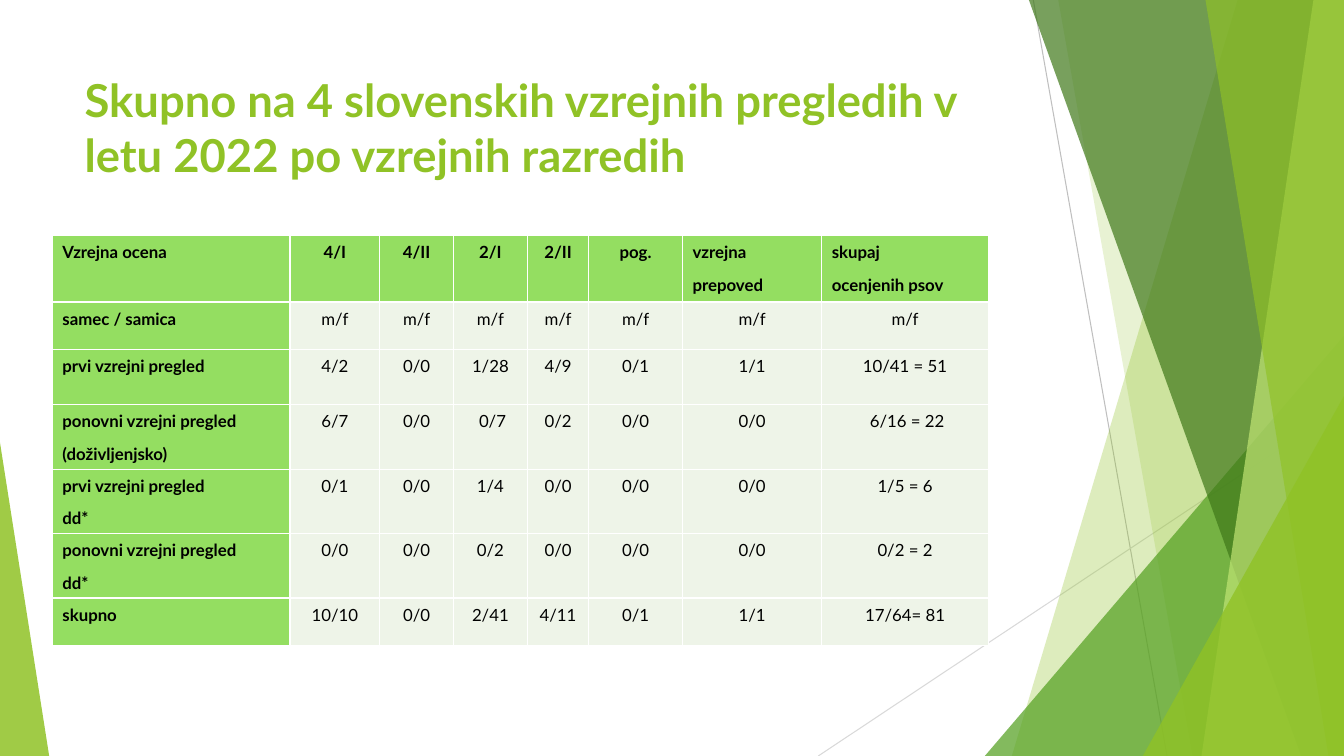
from dataclasses import dataclass

from lxml.etree import SubElement
from pptx import Presentation
from pptx.dml.color import RGBColor
from pptx.enum.shapes import MSO_CONNECTOR, MSO_SHAPE
from pptx.enum.text import MSO_ANCHOR, MSO_AUTO_SIZE, PP_ALIGN
from pptx.oxml.ns import qn
from pptx.util import Cm, Pt


@dataclass(frozen=True)
class Theme:
    """Colours, font and type sizes of the slide."""
    font: str = "Lato"
    title: float = 32.4
    body: float = 12
    ink: str = "000000"
    white: str = "FFFFFF"
    lime: str = "90C226"
    pale: str = "C0E474"
    green: str = "54A021"
    dark: str = "3F7819"
    head: str = "94DE61"
    cell: str = "EEF4E8"
    steep: str = "BFBFBF"
    flat: str = "D9D9D9"


THEME = Theme()
WIDE, HIGH = 33.87, 19.05
COLS = [5.99, 2.26, 1.86, 1.86, 1.55, 2.36, 3.51, 4.2]
ROWS = [1.68, 1.19, 1.4, 1.4, 1.4, 1.4, 1.19]
GRID = [
    ["Vzrejna ocena", "4/I", "4/II", "2/I", "2/II", "pog.",
     "vzrejna\nprepoved", "skupaj\nocenjenih psov"],
    ["samec / samica"] + ["m/f"] * 7,
    ["prvi vzrejni pregled", "4/2", "0/0", "1/28", "4/9", "0/1", "1/1", "10/41 = 51"],
    ["ponovni vzrejni pregled\n(doživljenjsko)",
     "6/7", "0/0", " 0/7", "0/2", "0/0", "0/0", " 6/16 = 22"],
    ["prvi vzrejni pregled\ndd*", "0/1", "0/0", "1/4", "0/0", "0/0", "0/0", "1/5 = 6"],
    ["ponovni vzrejni pregled\ndd*",
     "0/0", "0/0", "0/2", "0/0", "0/0", "0/0", "0/2 = 2"],
    ["skupno", "10/10", "0/0", "2/41", "4/11", "0/1", "1/1", "17/64= 81"],
]


def tint(shape, color, alpha):
    """Fill a shape with a see-through colour and no outline."""
    shape.shadow.inherit = False
    shape.line.fill.background()
    shape.fill.solid()
    shape.fill.fore_color.rgb = RGBColor.from_string(color)
    tone = shape.element.spPr.find(qn("a:solidFill"))[0]
    SubElement(tone, qn("a:alpha"), val=str(alpha * 1000))


def add_band(slide, top, foot, color, alpha):
    """Draw a slanted band that runs to the right edge."""
    pen = slide.shapes.build_freeform(Cm(top), 0)
    pen.add_line_segments(
        [(Cm(WIDE), 0), (Cm(WIDE), Cm(HIGH)), (Cm(foot), Cm(HIGH))], close=True)
    tint(pen.convert_to_shape(), color, alpha)


def add_wedge(slide, left, top, right, peak, color, alpha):
    """Draw a triangle that stands on the bottom edge."""
    wedge = slide.shapes.add_shape(
        MSO_SHAPE.ISOSCELES_TRIANGLE, Cm(left), Cm(top), Cm(right - left), Cm(HIGH - top))
    wedge.adjustments[0] = peak
    tint(wedge, color, alpha)


def add_line(slide, start, end, color):
    """Draw a thin straight line."""
    line = slide.shapes.add_connector(
        MSO_CONNECTOR.STRAIGHT, *map(Cm, start), *map(Cm, end))
    line.line.width = Pt(0.75)
    line.line.color.rgb = RGBColor.from_string(color)
    SubElement(line.element.spPr, qn("a:effectLst"))


def add_run(para, text, size, color, bold):
    """Add one formatted run to a paragraph."""
    run = para.add_run()
    run.text = text
    run.font.name = THEME.font
    run.font.size = Pt(size)
    run.font.bold = bold
    run.font.color.rgb = RGBColor.from_string(color)


def set_title(slide, text):
    """Place the title in front of the art and fill it."""
    title = slide.shapes.title
    slide.shapes.element.append(title.element)
    title.left, title.top = Cm(1.88), Cm(1.7)
    title.width, title.height = Cm(23.88), Cm(3.66)
    frame = title.text_frame
    frame.word_wrap = True
    frame.auto_size = MSO_AUTO_SIZE.NONE
    frame.vertical_anchor = MSO_ANCHOR.TOP
    para = frame.paragraphs[0]
    para.alignment = PP_ALIGN.LEFT
    add_run(para, text, THEME.title, THEME.lime, True)


def add_edge(cell):
    """Give a cell white borders on all sides."""
    props = cell._tc.get_or_add_tcPr()
    for side in ("lnL", "lnR", "lnT", "lnB"):
        edge = SubElement(props, qn(f"a:{side}"), w=str(Pt(1)))
        fill = SubElement(edge, qn("a:solidFill"))
        SubElement(fill, qn("a:srgbClr"), val=THEME.white)


def fill_cell(cell, text, head, align):
    """Write and format one table cell."""
    add_edge(cell)
    cell.fill.solid()
    cell.fill.fore_color.rgb = RGBColor.from_string(THEME.head if head else THEME.cell)
    frame = cell.text_frame
    for i, part in enumerate(text.split("\n")):
        para = frame.add_paragraph() if i else frame.paragraphs[0]
        para.alignment = align
        para.line_spacing = 1.07
        para.space_after = Pt(8)
        props = para._p.get_or_add_pPr()
        props.set("marL", str(Cm(0.97)))
        props.set("indent", str(Cm(-0.97)))
        add_run(para, part, THEME.body, THEME.ink, head)


def add_grid(slide):
    """Build the table of breeding grades."""
    table = slide.shapes.add_table(
        len(ROWS), len(COLS), Cm(1.32), Cm(5.93), Cm(sum(COLS)), Cm(sum(ROWS))).table
    for col, width in zip(table.columns, COLS):
        col.width = Cm(width)
    for r, (texts, height) in enumerate(zip(GRID, ROWS)):
        table.rows[r].height = Cm(height)
        for c, text in enumerate(texts):
            left = c == 0 or (r == 0 and c > 5)
            fill_cell(table.cell(r, c), text, r == 0 or c == 0,
                      PP_ALIGN.LEFT if left else PP_ALIGN.CENTER)


def add_art(slide):
    """Draw the green facets and thin lines at the edges."""
    add_line(slide, (26.04, 0), (29.41, HIGH), THEME.steep)
    add_line(slide, (WIDE, 10.24), (20.62, HIGH), THEME.flat)
    add_band(slide, 31.19, 25.5, THEME.lime, 30)
    add_band(slide, 26.67, 30.05, THEME.lime, 20)
    add_wedge(slide, 24.82, 8.46, WIDE, 1, THEME.green, 72)
    add_band(slide, 25.93, 32.79, THEME.dark, 70)
    add_band(slide, 33.1, 30.28, THEME.pale, 70)
    add_band(slide, 30.38, 33.48, THEME.lime, 65)
    add_wedge(slide, 28.8, 9.98, WIDE, 1, THEME.lime, 80)
    add_wedge(slide, 0, 11.15, 1.24, 0, THEME.lime, 85)


def main():
    """Build the slide and save it."""
    deck = Presentation()
    deck.slide_width, deck.slide_height = Cm(WIDE), Cm(HIGH)
    slide = deck.slides.add_slide(deck.slide_layouts[5])
    add_art(slide)
    set_title(slide, "Skupno na 4 slovenskih vzrejnih pregledih v letu 2022 po vzrejnih razredih")
    add_grid(slide)
    deck.save("out.pptx")


if __name__ == "__main__":
    main()
